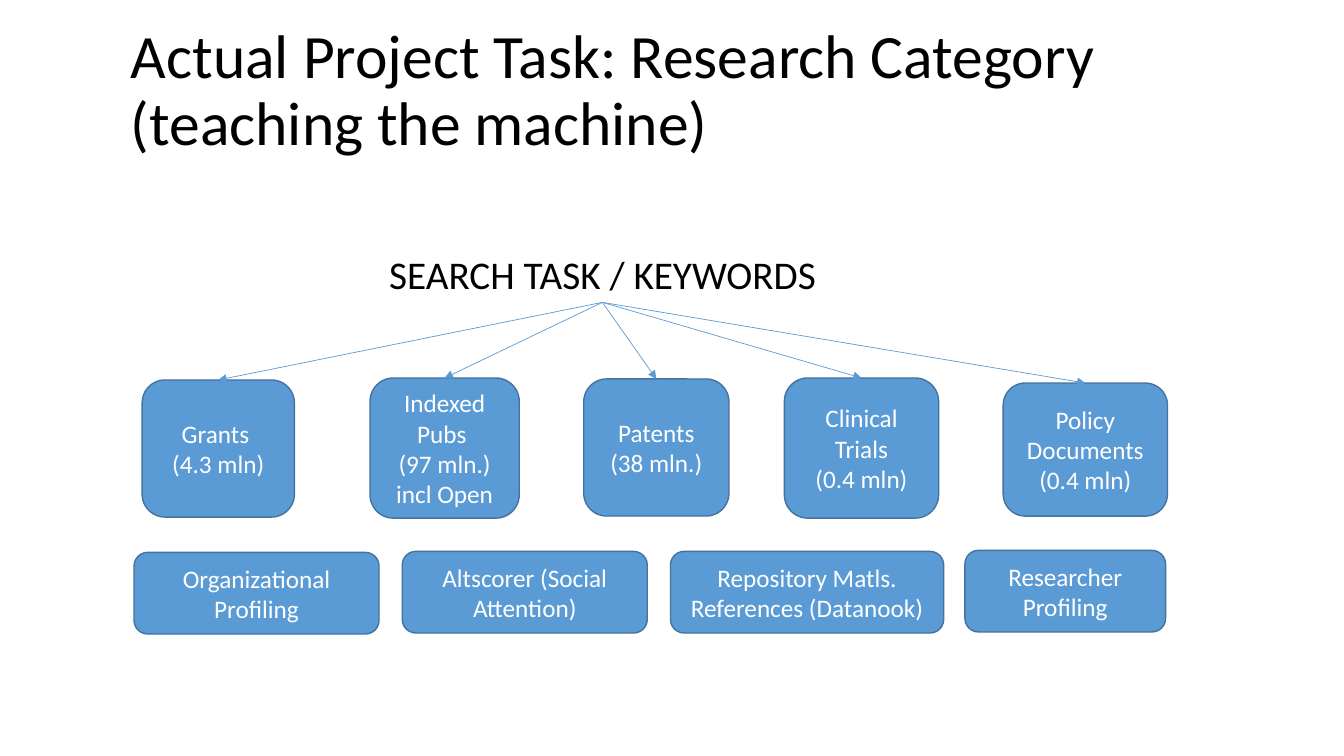
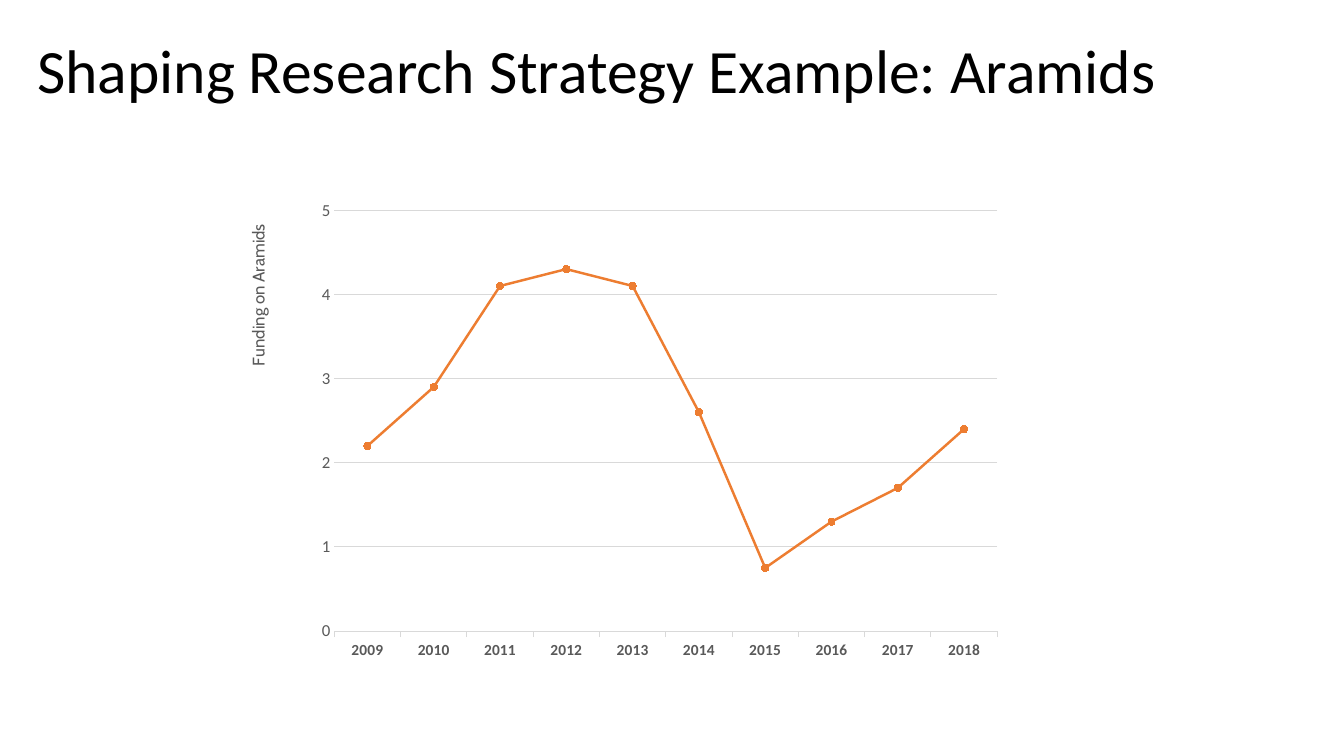
from lxml import etree
from pptx import Presentation
from pptx.chart.data import CategoryChartData
from pptx.dml.color import RGBColor
from pptx.enum import chart as charts, shapes, text
from pptx.oxml.ns import qn
from pptx.util import Inches, Pt

BLACK = RGBColor(0x00, 0x00, 0x00)
WHITE = RGBColor(0xFF, 0xFF, 0xFF)
BLUE = RGBColor(0x5B, 0x9B, 0xD5)
DARK_BLUE = RGBColor(0x43, 0x73, 0x9E)
ORANGE = RGBColor(0xED, 0x7D, 0x31)
GREY = RGBColor(0x59, 0x59, 0x59)
PALE_GREY = RGBColor(0xD9, 0xD9, 0xD9)
FONT = "Calibri"
TITLE_SIZE = (11.5, 1.45)


def write(shape, lines, size, color, align=None, anchor=text.MSO_ANCHOR.MIDDLE, spacing=None):
    """Fill a shape with one paragraph per line."""
    frame = shape.text_frame
    frame.word_wrap = True
    frame.vertical_anchor = anchor
    for index, line in enumerate(lines):
        para = frame.add_paragraph() if index else frame.paragraphs[0]
        para.alignment = align
        para.line_spacing = spacing
        span = para.add_run()
        span.text = line
        span.font.size = Pt(size)
        span.font.name = FONT
        span.font.color.rgb = color


def place(parent, index, **values):
    """Give a chart part a manual layout, as fractions of the chart."""
    for old in parent.findall(qn("c:layout")):
        parent.remove(old)
    layout = etree.Element(qn("c:layout"))
    manual = etree.SubElement(layout, qn("c:manualLayout"))
    for name, value in values.items():
        etree.SubElement(manual, qn(f"c:{name}")).set("val", str(value))
    parent.insert(index, layout)


deck = Presentation()
deck.slide_width, deck.slide_height = Inches(13.33), Inches(7.5)

# Both pages, with their titles
TITLES = [
    ("Actual Project Task: Research Category (teaching the machine)", 1.2, 0.19),
    ("Shaping Research Strategy Example: Aramids", 0.27, 0),
]
pages = []
for title, left, top in TITLES:
    page = deck.slides.add_slide(deck.slide_layouts[6])
    box = page.shapes.add_textbox(*map(Inches, (left, top, *TITLE_SIZE)))
    write(box, [title], 44, BLACK, spacing=0.9)
    pages.append(page)
task_page, funding_page = pages

# Search task and the sources it reaches
search = task_page.shapes.add_textbox(Inches(2.76), Inches(2.43), Inches(6.43), Inches(0.57))
write(search, ["SEARCH TASK / KEYWORDS"], 28, BLACK, text.PP_ALIGN.CENTER, text.MSO_ANCHOR.TOP)

SOURCES = [
    (["Grants ", "(4.3 mln)"], 1.41, 3.77, 1.51, 1.36),
    (["Indexed Pubs ", "(97 mln.) incl Open"], 3.67, 3.75, 1.48, 1.39),
    (["Patents (38 mln.)"], 5.79, 3.76, 1.44, 1.36),
    (["Clinical Trials", "(0.4 mln)"], 7.78, 3.75, 1.53, 1.39),
    (["Policy Documents", "(0.4 mln)"], 9.95, 3.8, 1.63, 1.32),
]
SERVICES = [
    (["Organizational Profiling"], 1.33, 5.48, 2.43, 0.81),
    (["Altscorer (Social Attention)"], 3.99, 5.47, 2.43, 0.81),
    (["Repository Matls. References (Datanook)"], 6.65, 5.47, 2.71, 0.81),
    (["Researcher Profiling"], 9.57, 5.46, 1.99, 0.81),
]
cards = []
for lines, *area in SOURCES + SERVICES:
    card = task_page.shapes.add_shape(shapes.MSO_SHAPE.ROUNDED_RECTANGLE, *map(Inches, area))
    card.shadow.inherit = False
    card.fill.solid()
    card.fill.fore_color.rgb = BLUE
    card.line.color.rgb = DARK_BLUE
    card.line.width = Pt(1)
    write(card, lines, 18, WHITE, text.PP_ALIGN.CENTER)
    cards.append(card)

for card in cards[:len(SOURCES)]:
    arrow = task_page.shapes.add_connector(shapes.MSO_CONNECTOR.STRAIGHT, 0, 0, 0, 0)
    arrow.begin_connect(search, 2)
    arrow.end_connect(card, 0)
    arrow.line.color.rgb = BLUE
    arrow.line.width = Pt(0.5)
    etree.SubElement(arrow.line._get_or_add_ln(), qn("a:tailEnd")).set("type", "triangle")
    etree.SubElement(arrow.element.spPr, qn("a:effectLst"))

# Funding chart
data = CategoryChartData()
data.categories = [str(year) for year in range(2009, 2019)]
data.add_series("Series 1", [2.2, 2.9, 4.1, 4.3, 4.1, 2.6, 0.75, 1.3, 1.7, 2.4])
chart = funding_page.shapes.add_chart(
    charts.XL_CHART_TYPE.LINE_MARKERS,
    Inches(2.12), Inches(1.84), Inches(8.54), Inches(5.34), data).chart
chart.has_legend = False
chart.has_title = False
chart.font.name = FONT
chart.font.size = Pt(10)
chart.font.color.rgb = BLACK
place(chart.element.find(".//" + qn("c:plotArea")), 0, layoutTarget="inner",
      xMode="edge", yMode="edge", x=0.14, y=0.046, w=0.77, h=0.782)

plot = chart.plots[0]
plot.vary_by_categories = False
funding = plot.series[0]
funding.smooth = False
funding.format.line.color.rgb = ORANGE
funding.format.line.width = Pt(1.75)
funding.marker.style = charts.XL_MARKER_STYLE.CIRCLE
funding.marker.size = 5
funding.marker.format.fill.solid()
funding.marker.format.fill.fore_color.rgb = ORANGE
funding.marker.format.line.color.rgb = ORANGE

years, amounts = chart.category_axis, chart.value_axis
for axis, size, bold in ((years, 11, True), (amounts, 12, False)):
    labels = axis.tick_labels.font
    labels.name = FONT
    labels.size = Pt(size)
    labels.bold = bold
    labels.color.rgb = GREY
years.major_tick_mark = charts.XL_TICK_MARK.OUTSIDE
amounts.major_tick_mark = charts.XL_TICK_MARK.NONE
amounts.minimum_scale, amounts.maximum_scale, amounts.major_unit = 0, 5, 1
amounts.format.line.fill.background()
amounts.has_major_gridlines = True
for rule in (years.format.line, amounts.major_gridlines.format.line):
    rule.color.rgb = PALE_GREY
    rule.width = Pt(0.75)

axis_title = amounts.axis_title
span = axis_title.text_frame.paragraphs[0].add_run()
span.text = "Funding on Aramids"
span.font.name = "Cabin"
span.font.size = Pt(12)
span.font.bold = False
span.font.color.rgb = GREY
axis_title.element.find(".//" + qn("a:bodyPr")).set("rot", "-5400000")
place(axis_title.element, 1, xMode="edge", yMode="edge", x=0.035, y=0.066)

deck.save("out.pptx")
